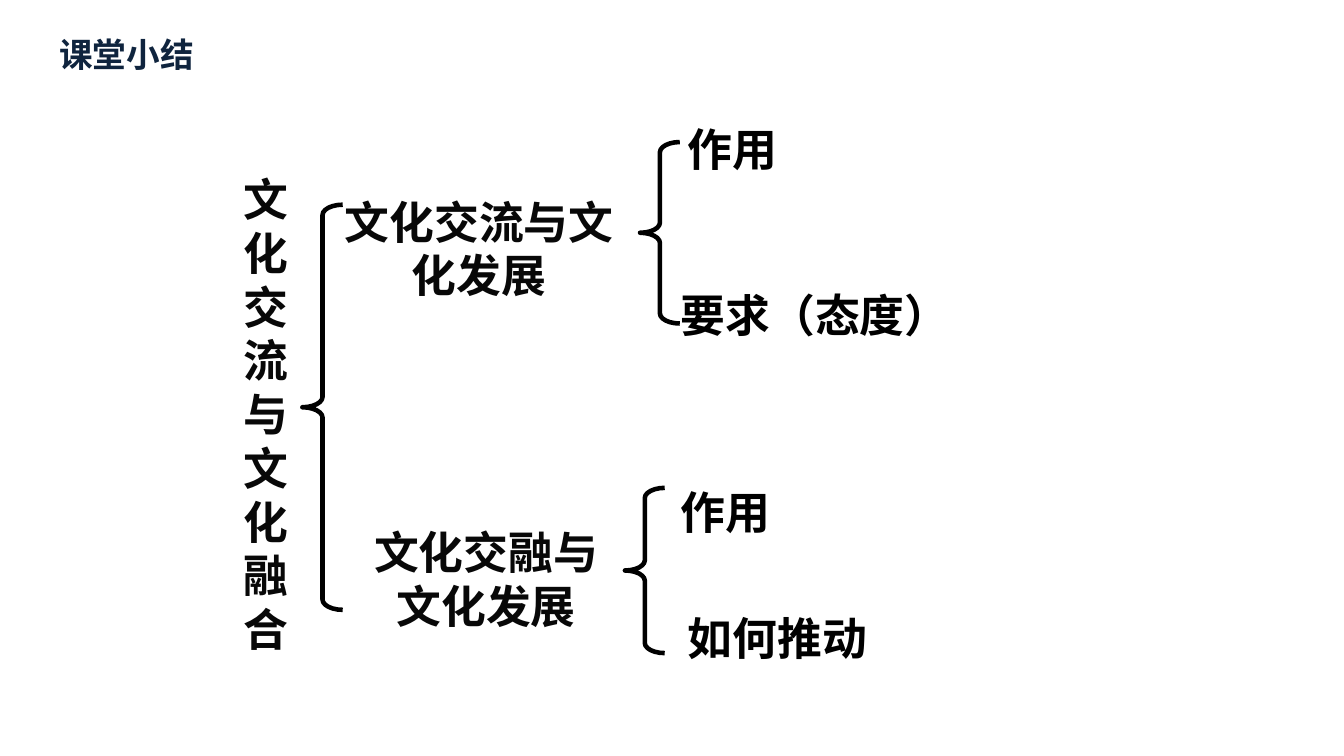
from pptx import Presentation
from pptx.dml.color import RGBColor
from pptx.enum.shapes import MSO_SHAPE
from pptx.enum.text import MSO_ANCHOR, MSO_AUTO_SIZE, PP_ALIGN
from pptx.util import Pt


def color(value):
    return RGBColor.from_string(value)


class Board:
    ink = "080808"
    black = "000000"
    navy = "0F243E"
    size = 32
    line_width = 3.25

    def __init__(self, slide):
        self.slide = slide

    def text(self, words, x, y, w, h, font="Calibri", fill=black, size=size,
             align=PP_ALIGN.LEFT, anchor=MSO_ANCHOR.MIDDLE, inset=(6, 3)):
        sp = self.slide.shapes.add_textbox(Pt(x), Pt(y), Pt(w), Pt(h))
        tf = sp.text_frame
        tf.word_wrap = True
        tf.auto_size = MSO_AUTO_SIZE.SHAPE_TO_FIT_TEXT
        tf.vertical_anchor = anchor
        tf.margin_left = tf.margin_right = Pt(inset[0])
        tf.margin_top = tf.margin_bottom = Pt(inset[1])
        p = tf.paragraphs[0]
        p.alignment = align
        r = p.add_run()
        r.text = words
        r.font.name = font
        r.font.size = Pt(size)
        r.font.bold = True
        r.font.color.rgb = color(fill)

    def title(self, words, x, y, w, h):
        self.text(words, x, y, w, h, "Arial", self.navy, 24,
                  anchor=MSO_ANCHOR.TOP, inset=(7.2, 3.6))

    def topic(self, words, x, y, w, h, font="Arial"):
        self.text(words, x, y, w, h, font, self.ink, align=PP_ALIGN.CENTER)

    def brace(self, x, y, w, h):
        sp = self.slide.shapes.add_shape(
            MSO_SHAPE.LEFT_BRACE, Pt(x), Pt(y), Pt(w), Pt(h))
        sp.adjustments[0] = 0.256
        sp.adjustments[1] = 0.5
        sp.shadow.inherit = False
        sp.fill.background()
        sp.line.color.rgb = color(self.black)
        sp.line.width = Pt(self.line_width)


def main():
    prs = Presentation()
    prs.slide_width, prs.slide_height = Pt(960), Pt(540)
    board = Board(prs.slides.add_slide(prs.slide_layouts[6]))

    board.title("课堂小结", 35.3, 20.9, 136, 36)
    board.topic("文化交流与文化融合", 159, 118, 62, 355, "Calibri")
    board.topic("文化交流与文化发展", 238.3, 135.4, 208, 83.5)
    board.topic("文化交融与文化发展", 249, 371.5, 196.6, 83.5)

    for x, y, w, h in [(216, 146.2, 28.8, 289.4),
                       (457.2, 101.5, 28.4, 129.6),
                       (446.4, 348.5, 28.4, 118)]:
        board.brace(x, y, w, h)

    for words, x, y, w in [("作用", 485.3, 84.2, 208),
                           ("要求（态度）", 480.2, 202.3, 225.4),
                           ("作用", 480.2, 343.4, 202.3),
                           ("如何推动", 485.3, 433.4, 247.7)]:
        board.text(words, x, y, w, 44.6)

    prs.save("out.pptx")


if __name__ == "__main__":
    main()
